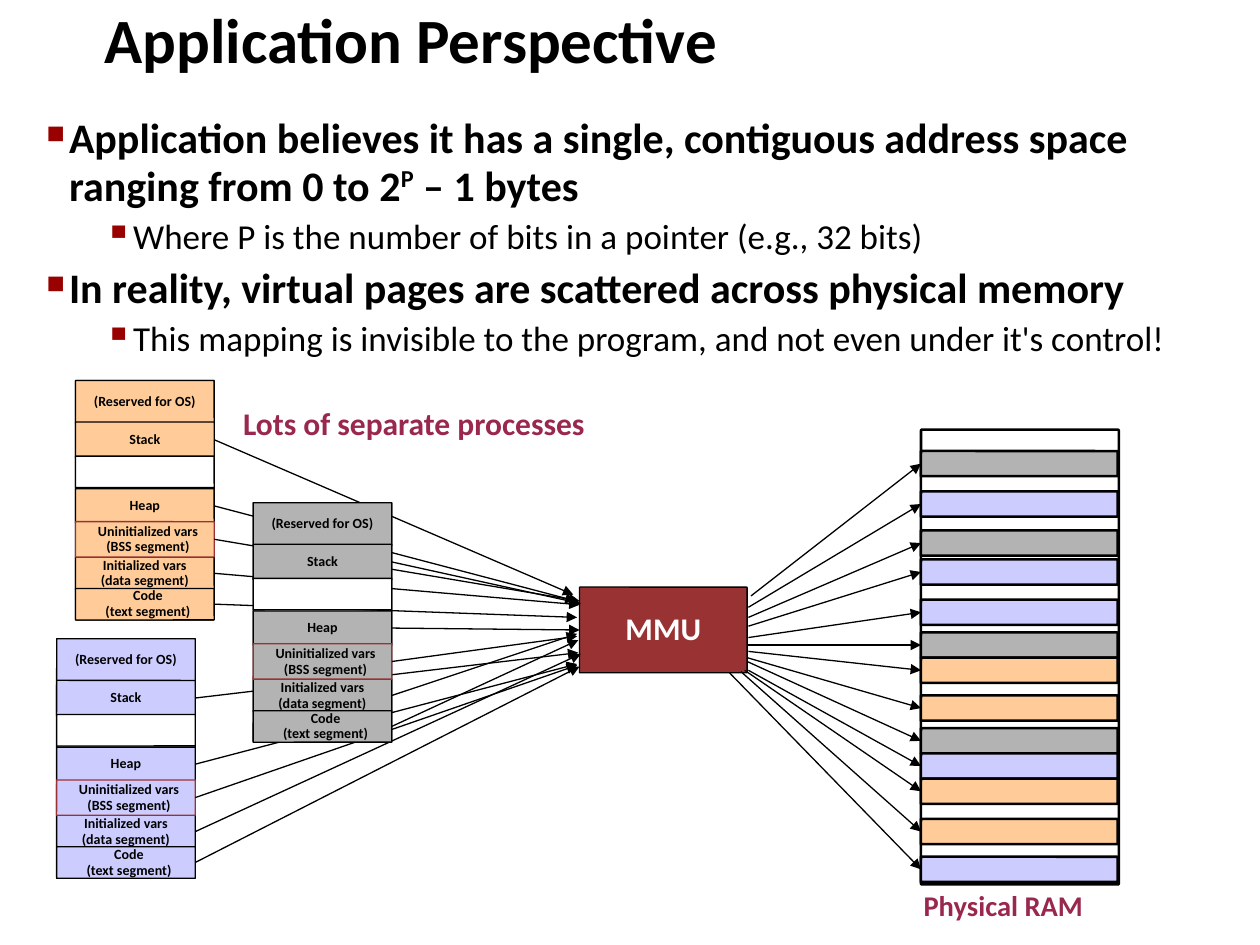
"""Build the slide on how an application sees memory."""
from lxml.etree import SubElement
from pptx import Presentation
from pptx.dml.color import RGBColor as Rgb
from pptx.enum.shapes import MSO_CONNECTOR as Link, MSO_SHAPE as Kind
from pptx.enum.text import MSO_ANCHOR as Anchor, PP_ALIGN as Align
from pptx.oxml.ns import qn
from pptx.util import Inches, Pt

HUES = {
    "black": "000000", "white": "FFFFFF", "orange": "FFCC99", "gray": "B3B3B3",
    "blue": "CCCCFF", "brick": "993333", "plum": "99284C", "bullet": "990000",
}
FONT = "Calibri"
RIGHT, LEFT = 3, 1

ROWS = [
    ("(Reserved for OS)", 0, 0.34, 0),
    ("Stack", 0.33, 0.28, 0),
    ("", 0.6, 0.25, 0),
    ("Heap", 0.86, 0.27, 0),
    ("Initialized vars\n(data segment)", 1.4, 0.26, 0),
    ("Code\n(text segment)", 1.65, 0.25, 0.05),
    ("Uninitialized vars\n(BSS segment)", 1.12, 0.28, 0.05),
]
TASKS = [
    ("orange", 0.6, 3.02,
     [(4.55, 4.72), (4.57, 4.77), (4.6, 4.8), (4.58, 4.9), (4.6, 4.77)]),
    ("blue", 0.45, 5.07,
     [(4.59, 5.18), (4.58, 5.27), (4.61, 5.19), (4.6, 5.29), (4.58, 5.28)]),
    ("gray", 2.01, 3.99,
     [(4.61, 4.79), None, (4.58, 5.03), (4.59, 5.08), (4.58, 5.05)]),
]
PAGES = [
    ("gray", 3.58, (5.96, 4.73)), ("blue", 3.9, (5.94, 4.82)),
    ("gray", 4.21, (5.94, 4.9)), ("blue", 4.44, (5.94, 4.97)),
    ("blue", 4.76, (5.94, 5.06)), ("gray", 5.02, (5.93, 5.12)),
    ("orange", 5.22, (5.94, 5.17)), ("orange", 5.52, (5.93, 5.22)),
    ("gray", 5.78, (5.93, 5.25)), ("blue", 5.98, (5.94, 5.32)),
    ("orange", 6.18, (5.91, 5.32)), ("orange", 6.5, (5.88, 5.33)),
    ("blue", 6.8, (5.79, 5.34)),
]
POINTS = [
    (0, ["Application believes it has a single, contiguous address space "
         "ranging from 0 to 2", "P", " – 1 bytes"]),
    (1, ["Where P is the number of bits in a pointer (e.g., 32 bits)"]),
    (0, ["In reality, virtual pages are scattered across physical memory"]),
    (1, ["This mapping is invisible to the program, and not even under it's control!"]),
]
LEVELS = [(24, True, 0.28, "■", "60000"), (20, False, 0.74, "▪", "110000")]


def hue(name):
    """Return the named colour."""
    return Rgb.from_string(HUES[name])


class Deck:
    """Hold the style and the current slide."""

    def __init__(self):
        """Start a deck with one title-only slide."""
        self.prs = Presentation()
        self.prs.slide_width, self.prs.slide_height = Inches(10), Inches(7.5)
        self.slide = self.prs.slides.add_slide(self.prs.slide_layouts[5])
        self.items = self.slide.shapes

    def style(self, frame, size, color="black", bold=True, align=Align.LEFT):
        """Format every paragraph and run of a frame."""
        for para in frame.paragraphs:
            para.alignment, para.line_spacing = align, 0.94
            for run in para.runs:
                font = run.font
                font.name, font.size, font.bold = FONT, Pt(size), bold
                font.color.rgb = hue(color)

    def inset(self, frame, left=0):
        """Clear the margins of a frame, save perhaps the left one."""
        frame.margin_left = Inches(left)
        frame.margin_right = frame.margin_top = frame.margin_bottom = 0

    def title(self, text, *area):
        """Place and fill the title."""
        head = self.items.title
        head.left, head.top, head.width, head.height = map(Inches, area)
        frame = head.text_frame
        frame.text = text
        frame.vertical_anchor = Anchor.MIDDLE
        self.style(frame, 36)

    def label(self, text, size, color, *area):
        """Add a line of free text."""
        frame = self.items.add_textbox(*map(Inches, area)).text_frame
        frame.word_wrap = False
        self.inset(frame)
        frame.text = text
        self.style(frame, size, color)

    def bullets(self, points, *area):
        """Add a two-level bullet list, its second runs raised."""
        frame = self.items.add_textbox(*map(Inches, area)).text_frame
        frame.word_wrap = True
        for num, (level, parts) in enumerate(points):
            size, bold, indent, mark, scale = LEVELS[level]
            para = frame.add_paragraph() if num else frame.paragraphs[0]
            para.level, para.line_spacing = level, 0.94
            para.space_before = Pt(size * 0.2)
            for spot, part in enumerate(parts):
                run = para.add_run()
                run.text = part
                font = run.font
                font.name, font.size, font.bold = FONT, Pt(size), bold
                font.color.rgb = hue("black")
                if spot == 1:
                    run._r.get_or_add_rPr().set("baseline", "33000")
            props = para._p.get_or_add_pPr()
            props.set("marL", str(Inches(indent)))
            props.set("indent", str(Inches(-0.18)))
            tint = SubElement(props, qn("a:buClr"))
            SubElement(tint, qn("a:srgbClr"), val=HUES["bullet"])
            SubElement(props, qn("a:buSzPct"), val=scale)
            SubElement(props, qn("a:buChar"), char=mark)

    def box(self, area, fill=None, text="", size=8, color="black",
            edge="black", width=0.75, left=0):
        """Add an outlined box with centred text."""
        shape = self.items.add_shape(Kind.ROUNDED_RECTANGLE, *map(Inches, area))
        shape.adjustments[0] = 0.005
        shape.shadow.inherit = False
        if fill:
            shape.fill.solid()
            shape.fill.fore_color.rgb = hue(fill)
        else:
            shape.fill.background()
        shape.line.color.rgb = hue(edge)
        shape.line.width = Pt(width)
        if text:
            frame = shape.text_frame
            frame.word_wrap = True
            frame.vertical_anchor = Anchor.MIDDLE
            self.inset(frame, left)
            frame.text = text
            self.style(frame, size, color, align=Align.CENTER)
        return shape

    def arrow(self, start=(0, 0), end=(0, 0), source=None, target=None):
        """Add an arrow between points or the sides of boxes."""
        line = self.items.add_connector(Link.STRAIGHT, *map(Inches, start + end))
        if source:
            line.begin_connect(source, RIGHT)
        if target:
            line.end_connect(target, LEFT)
        line.line.color.rgb = hue("black")
        line.line.width = Pt(0.75)
        SubElement(line.line._get_or_add_ln(), qn("a:tailEnd"), type="triangle")
        SubElement(line._element.spPr, qn("a:effectLst"))

    def task(self, color, left, top, ends, unit):
        """Add the address space of a process and its arrows to the unit."""
        self.box((left, top, 1.1, 1.9))
        cells = []
        for text, down, high, pad in ROWS:
            edge = "brick" if text.startswith("Un") else "black"
            cell = self.box((left, top + down, 1.1, high), color if text else "white",
                            text, edge=edge, left=pad)
            if text and down:
                cells.append(cell)
        for cell, end in zip(cells, ends):
            if end:
                self.arrow(end=end, source=cell)
            else:
                self.arrow(source=cell, target=unit)


def main():
    """Build and save the slide."""
    deck = Deck()
    deck.title("Application Perspective", 0.73, 0.1, 8.54, 0.47)
    deck.bullets(POINTS, 0.17, 0.87, 9.63, 2.17)
    unit = deck.box((4.6, 4.66, 1.33, 0.68), "brick", "MMU", 18, "white")
    for task in TASKS:
        deck.task(*task, unit)
    deck.box((7.31, 3.41, 1.57, 3.61), width=1.45)
    for color, top, start in PAGES:
        page = deck.box((7.31, top, 1.56, 0.2), color, width=1.45)
        deck.arrow(start=start, target=page)
    deck.label("Physical RAM", 16.3, "plum", 7.33, 7.07, 1.65, 0.26)
    deck.label("Lots of separate processes", 18, "plum", 1.93, 3.23, 2.72, 0.26)
    deck.prs.save("out.pptx")


if __name__ == "__main__":
    main()
